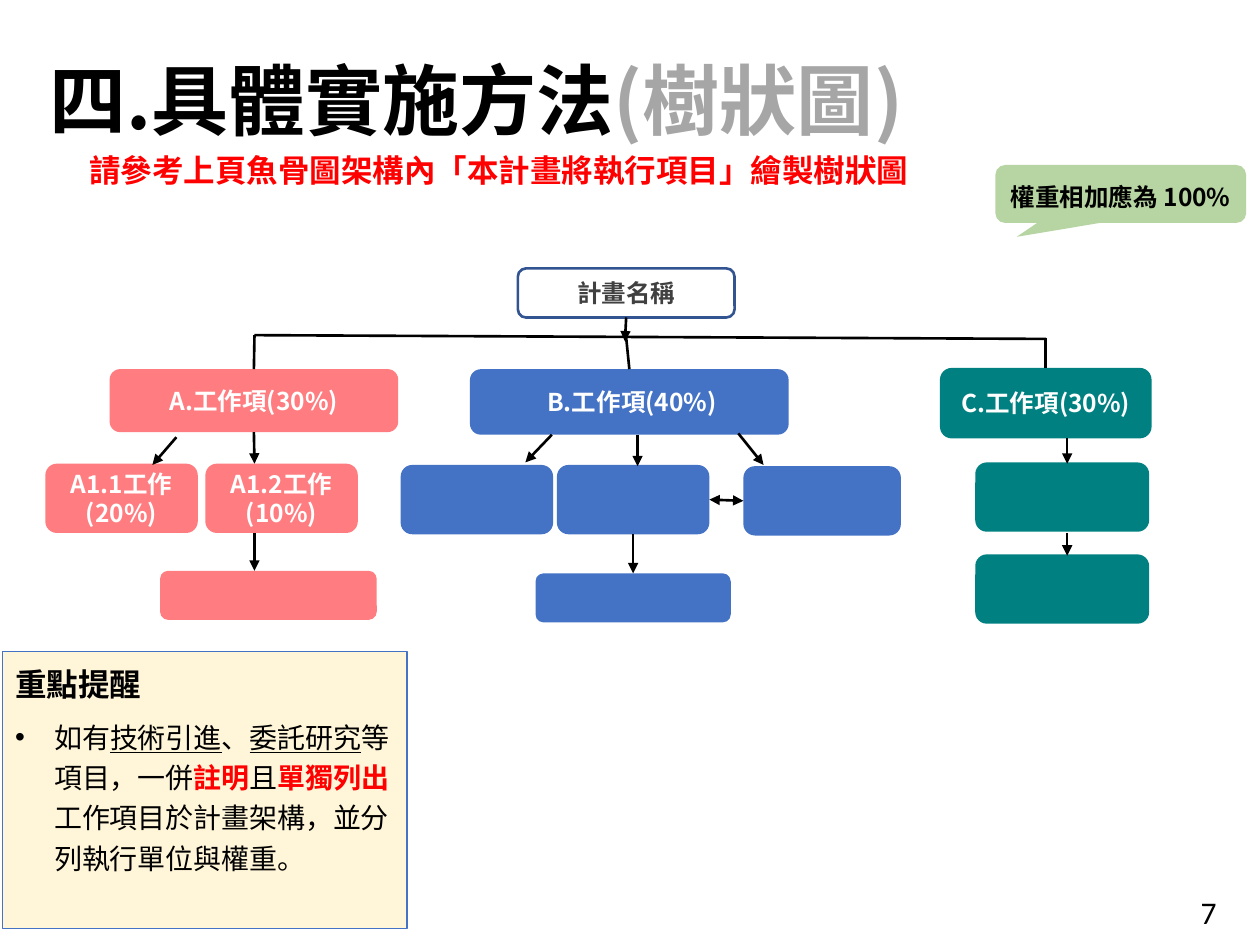
from lxml import etree
from pptx import Presentation
from pptx.dml.color import RGBColor
from pptx.enum.shapes import MSO_CONNECTOR, MSO_SHAPE
from pptx.enum.text import MSO_ANCHOR, MSO_AUTO_SIZE, PP_ALIGN
from pptx.oxml.ns import qn
from pptx.util import Inches, Pt

BLACK = RGBColor(0, 0, 0)
WHITE = RGBColor(255, 255, 255)
RED = RGBColor(255, 0, 0)
GREY = RGBColor(0xA6, 0xA6, 0xA6)
CHARCOAL = RGBColor(0x40, 0x40, 0x40)
NAVY = RGBColor(0x32, 0x54, 0x91)
PINK = RGBColor(0xFF, 0x7C, 0x80)
BLUE = RGBColor(0x44, 0x72, 0xC4)
TEAL = RGBColor(0, 0x80, 0x80)
GREEN = RGBColor(0x70, 0xAD, 0x47)
CREAM = RGBColor(0xFF, 0xF6, 0xD9)
ROUNDED = MSO_SHAPE.ROUNDED_RECTANGLE
CALLOUT = MSO_SHAPE.ROUNDED_RECTANGULAR_CALLOUT
STRAIGHT = MSO_CONNECTOR.STRAIGHT
TOP, MIDDLE = MSO_ANCHOR.TOP, MSO_ANCHOR.MIDDLE
LEFT, CENTER = PP_ALIGN.LEFT, PP_ALIGN.CENTER
NO_AUTOFIT = MSO_AUTO_SIZE.NONE
UP_SIDE, LEFT_SIDE, DOWN_SIDE, RIGHT_SIDE = range(4)
COLUMNS, ROWS = 100, 75


class TreeSlide:
    """Draws on one slide, with lengths in columns and rows of its grid."""

    face = "Noto Sans CJK SC"

    def __init__(self, presentation, layout_index):
        self.slide = presentation.slides.add_slide(presentation.slide_layouts[layout_index])
        self.column = presentation.slide_width / COLUMNS
        self.row = presentation.slide_height / ROWS

    def grid(self, *lengths):
        return [round(length * unit) for length, unit in zip(lengths, (self.column, self.row) * 2)]

    def style(self, paragraph, size, color, bold=True, face=None, align=LEFT, spacing=1.0):
        font = paragraph.font
        font.size, font.bold, font.name = Pt(size), bold, face or self.face
        font.color.rgb = color
        properties = paragraph._p.get_or_add_pPr().find(qn("a:defRPr"))
        etree.SubElement(properties, qn("a:ea")).set("typeface", face or self.face)
        paragraph.alignment, paragraph.line_spacing = align, spacing
        paragraph.space_before = Pt(0)

    def set_text(self, frame, text, anchor=TOP, **style):
        frame.word_wrap, frame.auto_size, frame.vertical_anchor = True, NO_AUTOFIT, anchor
        for index, line in enumerate(text.split("\n")):
            paragraph = frame.add_paragraph() if index else frame.paragraphs[0]
            paragraph.text = line
            self.style(paragraph, **style)

    def placeholder(self, index, position):
        shape = self.slide.placeholders[index]
        shape.left, shape.top, shape.width, shape.height = self.grid(*position)
        return shape

    def title(self, position, text, note):
        frame = self.placeholder(0, position).text_frame
        self.set_text(frame, text, size=44, color=BLACK, spacing=1.5)
        run = frame.paragraphs[0].add_run()
        run.text = note
        run.font.color.rgb = GREY

    def reminder(self, position, heading, runs):
        shape = self.placeholder(1, position)
        shape.fill.solid()
        shape.fill.fore_color.rgb = CREAM
        shape.line.color.rgb, shape.line.width = BLUE, Pt(1)
        frame = shape.text_frame
        self.set_text(frame, heading, size=18, color=BLACK, spacing=1.2)
        self.bullet(frame.paragraphs[0], None)
        paragraph = frame.add_paragraph()
        self.style(paragraph, 16, BLACK, bold=False, spacing=1.2)
        paragraph.space_before = Pt(6)
        self.bullet(paragraph, "•")
        for text, emphasis in runs:
            run = paragraph.add_run()
            run.text = text
            if emphasis == "underline":
                run.font.underline = True
            elif emphasis == "red":
                run.font.bold, run.font.color.rgb = True, RED

    def bullet(self, paragraph, character):
        properties = paragraph._p.get_or_add_pPr()
        indent = Inches(0.31) if character else 0
        properties.set("marL", str(indent))
        properties.set("indent", str(-indent))
        mark = etree.Element(qn("a:buChar" if character else "a:buNone"))
        if character:
            mark.set("char", character)
        properties.find(qn("a:defRPr")).addprevious(mark)

    def text(self, position, text, **style):
        self.set_text(self.slide.shapes.add_textbox(*self.grid(*position)).text_frame, text, **style)

    def box(self, position, fill=None, text="", color=WHITE, outline=None, kind=ROUNDED,
            align=CENTER, spacing=1.0):
        shape = self.slide.shapes.add_shape(kind, *self.grid(*position))
        shape.shadow.inherit = False
        if fill:
            shape.fill.solid()
            shape.fill.fore_color.rgb = fill
        else:
            shape.fill.background()
        if outline:
            shape.line.color.rgb, shape.line.width = outline, Pt(1.5)
        else:
            shape.line.fill.background()
        if text:
            self.set_text(shape.text_frame, text, MIDDLE, size=14, color=color, align=align,
                          spacing=spacing)
        return shape

    def callout(self, position, text, tail):
        shape = self.box(position, GREEN, text, BLACK, kind=CALLOUT, align=LEFT, spacing=1.2)
        for index, value in enumerate(tail):
            shape.adjustments[index] = value
        color = shape._element.spPr.find(qn("a:solidFill"))[0]
        etree.SubElement(color, qn("a:alpha")).set("val", "50000")

    def line(self, start, end, arrows=(), begin=None, finish=None):
        connector = self.slide.shapes.add_connector(STRAIGHT, *self.grid(*start, *end))
        connector.line.color.rgb, connector.line.width = BLACK, Pt(1.5)
        if begin:
            connector.begin_connect(*begin)
        if finish:
            connector.end_connect(*finish)
        outline = connector._element.spPr.find(qn("a:ln"))
        for arrow in arrows:
            etree.SubElement(outline, qn("a:" + arrow)).set("type", "triangle")
        etree.SubElement(connector._element.spPr, qn("a:effectLst"))


def main():
    presentation = Presentation()
    presentation.slide_width, presentation.slide_height = Inches(10), Inches(7.5)
    tree = TreeSlide(presentation, 1)
    arrow = ("tailEnd",)

    tree.title((2.9, 0, 87.5, 10.8), "四.具體實施方法", "(樹狀圖)")
    tree.text((6.1, 11.5, 70.6, 4), "請參考上頁魚骨圖架構內「本計畫將執行項目」繪製樹狀圖", size=18, color=RED)
    tree.callout((79, 13.1, 19.9, 4.6), "權重相加應為 100%", (-0.415, 0.74, 0.167))

    project = tree.box((41.1, 21.3, 17.2, 3.9), text="計畫名稱", color=CHARCOAL, outline=NAVY)
    task_a = tree.box((8.7, 29.3, 22.9, 5), PINK, "A.工作項(30%)")
    task_b = tree.box((37.3, 29.3, 25.3, 5.2), BLUE, " B.工作項(40%)")
    task_c = tree.box((74.6, 29.2, 16.8, 5.6), TEAL, "C.工作項(30%)")

    for left, text in ((3.6, "A1.1工作\n(20%)"), (16.3, "A1.2工作\n(10%)")):
        tree.box((left, 36.8, 12.1, 5.5), PINK, text)
    tree.box((12.7, 45.3, 17.2, 3.9), PINK)
    tree.box((31.8, 36.9, 12.1, 5.5), BLUE)
    middle_b = tree.box((44.2, 36.9, 12.1, 5.5), BLUE)
    right_b = tree.box((59, 37, 12.5, 5.5), BLUE)
    last_b = tree.box((42.5, 45.5, 15.5, 3.9), BLUE)
    for top in (36.7, 44):
        tree.box((77.4, top, 13.8, 5.5), TEAL)

    tree.line((20.2, 26.6), (83, 26.9))
    tree.line((49.7, 25.2), (49.6, 27.1), arrow, begin=(project, DOWN_SIDE))
    for x, top, task in ((20.2, 26.6, task_a), (49.7, 26.8, task_b), (83, 26.8, task_c)):
        tree.line((x, top), (x, 29.3), finish=(task, UP_SIDE))

    tree.line((20.2, 34.3), (20.2, 36.8), arrow, begin=(task_a, DOWN_SIDE))
    for start, end in (
        ((14, 34.7), (12.1, 36.9)), ((20.2, 42.3), (20.2, 45.3)),
        ((43.8, 34.5), (41.7, 36.7)), ((50.6, 34.5), (50.6, 37)), ((58.6, 34.4), (60.6, 36.9)),
        ((84.7, 34.8), (84.7, 36.8)), ((84.7, 42.3), (84.7, 44.1)),
    ):
        tree.line(start, end, arrow)
    tree.line((50.3, 42.4), (50.3, 45.5), arrow, (middle_b, DOWN_SIDE), (last_b, UP_SIDE))
    tree.line((56.3, 39.7), (59, 39.8), ("headEnd", "tailEnd"),
              (middle_b, RIGHT_SIDE), (right_b, LEFT_SIDE))

    tree.reminder((0.2, 51.7, 32.1, 22), "重點提醒", (
        ("如有", None), ("技術引進", "underline"), ("、", None), ("委託研究", "underline"),
        ("等項目，一併", None), ("註明", "red"), ("且", None), ("單獨列出", "red"),
        ("工作項目於計畫架構，並分列執行單位與權重。", None),
    ))
    tree.text((94.3, 70.4, 5.7, 4), "7", size=18, color=BLACK, bold=False, face="Calibri")
    presentation.save("out.pptx")


if __name__ == "__main__":
    main()
